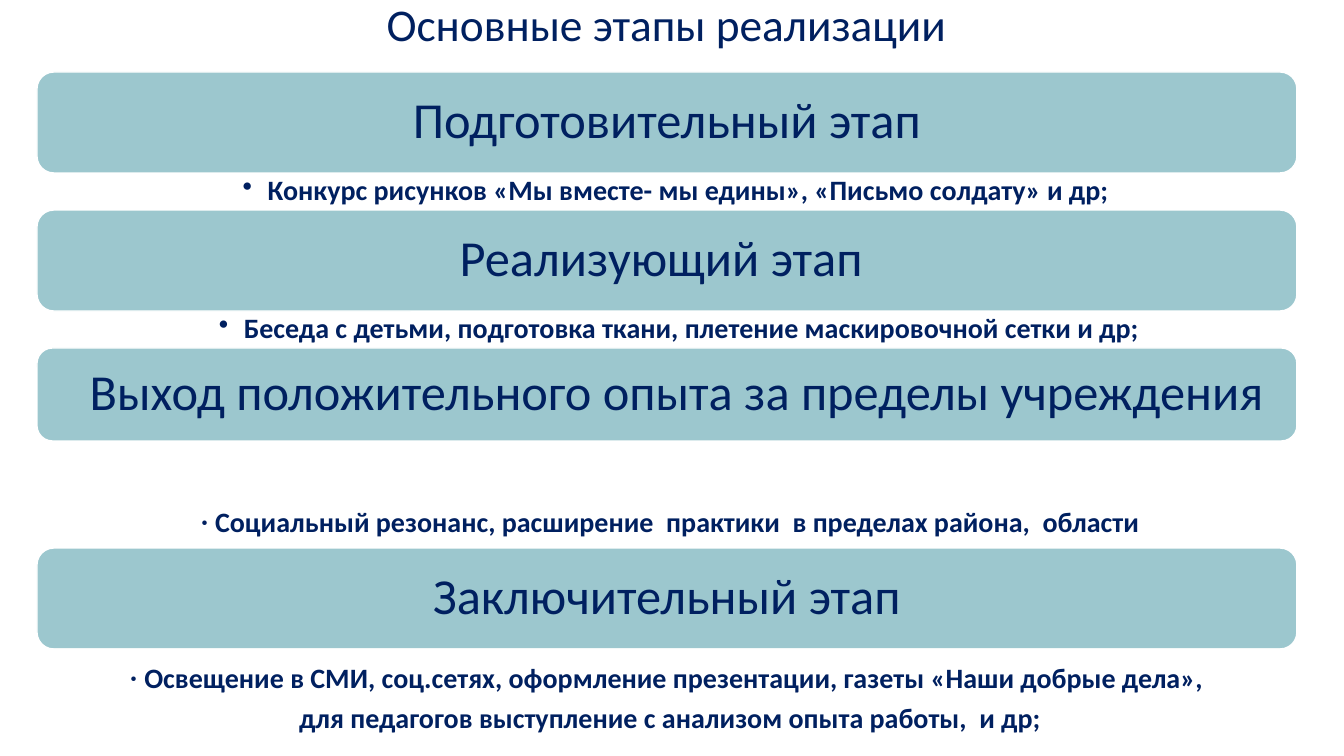
from dataclasses import dataclass

from lxml.etree import SubElement
from pptx import Presentation
from pptx.dml.color import RGBColor
from pptx.enum.shapes import MSO_SHAPE
from pptx.enum.text import MSO_ANCHOR, PP_ALIGN
from pptx.oxml.ns import qn
from pptx.util import Emu, Pt


@dataclass(frozen=True)
class Theme:
    ink: RGBColor = RGBColor(0x00, 0x20, 0x60)
    band: RGBColor = RGBColor(0x9C, 0xC7, 0xCE)
    white: RGBColor = RGBColor(0xFF, 0xFF, 0xFF)
    font: str = "Calibri"
    marker_font: str = "Times New Roman"
    title_size: float = 32.4
    stage_size: int = 36
    note_size: int = 20


theme = Theme()
PX = 914400 / 100.8
LEFT, WIDTH = 37, 1260


def px(*lengths):
    return [Emu(round(length * PX)) for length in lengths]


def write(shape, lines, size, insets, anchor, bold=False):
    """Fill a shape with centred paragraphs; return them."""
    frame = shape.text_frame
    frame.word_wrap = True
    frame.vertical_anchor = anchor
    (frame.margin_left, frame.margin_top,
     frame.margin_right, frame.margin_bottom) = px(*insets)
    frame.text = "\n".join(lines)
    for paragraph in frame.paragraphs:
        paragraph.alignment = PP_ALIGN.CENTER
        paragraph.line_spacing = 0.9
        paragraph.font.name = theme.font
        paragraph.font.size = Pt(size)
        paragraph.font.bold = bold
        paragraph.font.color.rgb = theme.ink
    return frame.paragraphs


presentation = Presentation()
presentation.slide_width, presentation.slide_height = px(1344, 756)
slide = presentation.slides.add_slide(presentation.slide_layouts[5])

# Title
title = slide.shapes.title
title.left, title.top, title.width, title.height = px(17, 0, 1299, 105)
write(title, ["Основные этапы реализации"], theme.title_size,
      (9, 2, 9, 2), MSO_ANCHOR.TOP)

# Rounded panels, back to front: top, height, fill, text, left inset, inset
stage_panels = [
    (72, 101, theme.band, "Подготовительный этап", 15, 15),
    (210, 101, theme.band, "Реализующий этап ", 15, 15),
    (348, 93, theme.band, "Выход положительного опыта за пределы учреждения ", 33, 2),
    (473, 101, theme.white,
     [" ∙ Социальный резонанс, расширение  практики  в пределах района,  области"], 8, 8),
    (548, 101, theme.band, "Заключительный этап", 15, 15),
    (649, 101, theme.white,
     ["∙ Освещение в СМИ, соц.сетях, оформление презентации, газеты «Наши добрые дела»,",
      " для педагогов выступление с анализом опыта работы,  и др;"], 8, 8),
]
for top, height, fill, text, left_inset, inset in stage_panels:
    panel = slide.shapes.add_shape(
        MSO_SHAPE.ROUNDED_RECTANGLE, *px(LEFT, top, WIDTH, height))
    panel.shadow.inherit = False
    panel.fill.solid()
    panel.fill.fore_color.rgb = fill
    panel.line.color.rgb = theme.white
    panel.line.width = Pt(1)
    insets = (left_inset, inset, inset, inset)
    if fill == theme.band:
        write(panel, [text], theme.stage_size, insets, MSO_ANCHOR.MIDDLE)
        continue
    paragraphs = write(panel, text, theme.note_size, insets, MSO_ANCHOR.MIDDLE, True)
    for paragraph in paragraphs:
        paragraph.space_after = Pt(7)
    # The marker has its own typeface
    before, marker, after = paragraphs[0].text.partition("∙ ")
    paragraphs[0].runs[0].text = before + marker
    paragraphs[0].runs[0].font.name = theme.marker_font
    paragraphs[0].add_run().text = after

# Bulleted notes under the first two stages
bulleted_notes = [
    (173, "Конкурс рисунков «Мы вместе- мы едины», «Письмо солдату» и др; "),
    (311, "Беседа с детьми, подготовка ткани, плетение маскировочной сетки и др;"),
]
for top, text in bulleted_notes:
    note = slide.shapes.add_textbox(*px(LEFT, top, WIDTH, 36))
    note.text_frame.text = text
    properties = note.text_frame.paragraphs[0]._p.get_or_add_pPr()
    write(note, [text], theme.note_size, (40, 3, 16, 3), MSO_ANCHOR.TOP, True)
    properties = note.text_frame.paragraphs[0]._p.get_or_add_pPr()
    indent = px(25)[0]
    properties.set("marL", str(indent))
    properties.set("indent", str(-indent))
    bullet = SubElement(properties, qn("a:buChar"), char="•")
    properties.find(qn("a:defRPr")).addprevious(bullet)

presentation.save("out.pptx")
